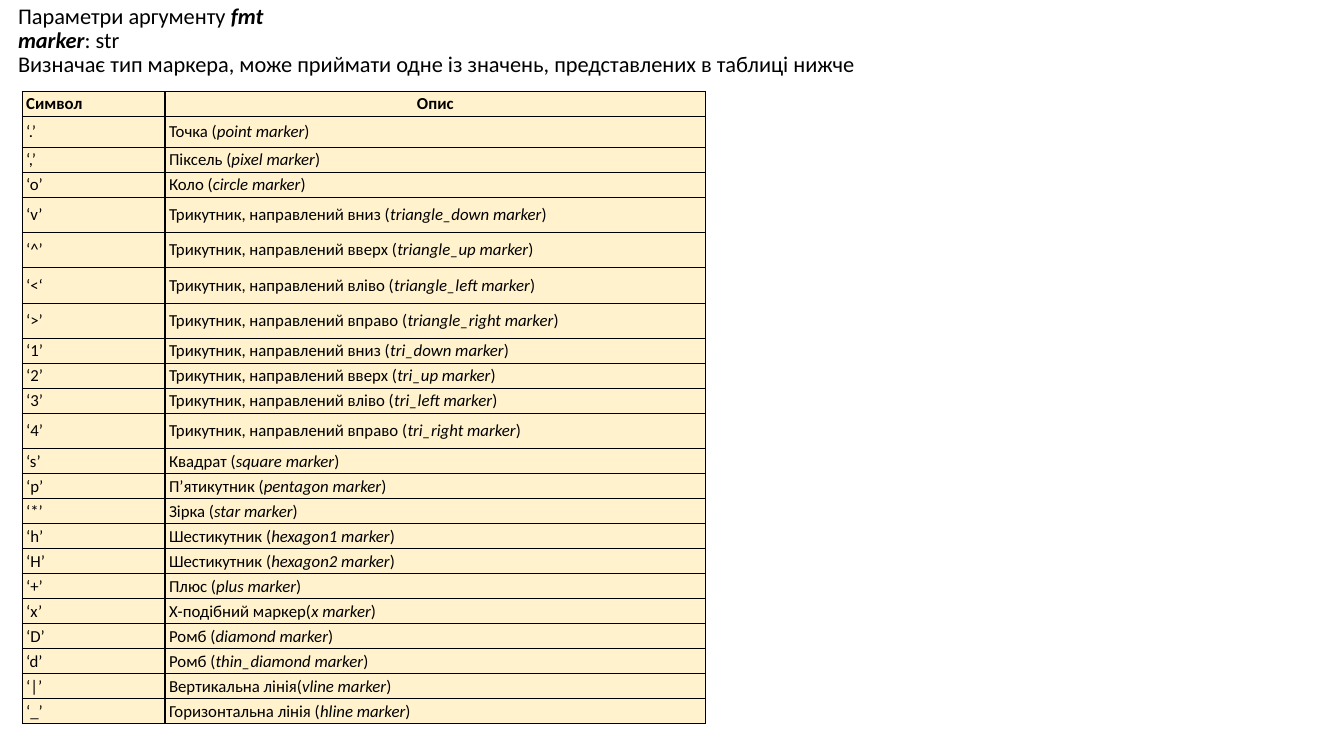
from lxml.etree import SubElement
from pptx import Presentation
from pptx.dml.color import RGBColor
from pptx.enum.text import MSO_ANCHOR, MSO_AUTO_SIZE, PP_ALIGN
from pptx.oxml import parse_xml
from pptx.oxml.ns import nsdecls, qn
from pptx.util import Cm, Pt

MARKERS = [
    ("‘.’", "Точка (", "point"),
    ("‘,’", "Піксель (", "pixel"),
    ("‘o’", "Коло (", "circle"),
    ("‘v’", "Трикутник, направлений вниз (", "triangle_down"),
    ("‘^’", "Трикутник, направлений вверх (", "triangle_up"),
    ("‘<‘", "Трикутник, направлений вліво (", "triangle_left"),
    ("‘>’", "Трикутник, направлений вправо (", "triangle_right"),
    ("‘1’", "Трикутник, направлений вниз (", "tri_down"),
    ("‘2’", "Трикутник, направлений вверх (", "tri_up"),
    ("‘3’", "Трикутник, направлений вліво (", "tri_left"),
    ("‘4’", "Трикутник, направлений вправо (", "tri_right"),
    ("‘s’", "Квадрат (", "square"),
    ("‘p’", "П’ятикутник (", "pentagon"),
    ("‘*’", "Зірка (", "star"),
    ("‘h’", "Шестикутник (", "hexagon1"),
    ("‘H’", "Шестикутник (", "hexagon2"),
    ("‘+’", "Плюс (", "plus"),
    ("‘x’", "Х-подібний маркер(", "x"),
    ("‘D’", "Ромб (", "diamond"),
    ("‘d’", "Ромб (", "thin_diamond"),
    ("‘|’", "Вертикальна лінія(", "vline"),
    ("‘_’", "Горизонтальна лінія (", "hline"),
]
ROW_HEIGHT = 0.63
TALL_ROWS = {"‘.’": 0.77, **dict.fromkeys(["‘v’", "‘^’", "‘<‘", "‘>’", "‘4’"], 0.89)}


def color(value):
    return RGBColor.from_string(value)


def write(para, text, size=12, bold=False, italic=False, ink="000000", font="Calibri"):
    span = para.add_run()
    span.text = text
    span.font.name = font
    span.font.size = Pt(size)
    span.font.bold = bold
    span.font.italic = italic
    span.font.color.rgb = color(ink)


class Page:
    cell_fill = "FFF2CC"
    border = "000000"
    intro_size = 16

    def __init__(self, deck):
        self.slide = deck.slides.add_slide(deck.slide_layouts[1])
        title = self.slide.shapes.title.element
        title.getparent().remove(title)

    def intro(self, lines, left, top, width, height):
        box = self.slide.placeholders[1]
        box.left, box.top, box.width, box.height = map(Cm, (left, top, width, height))
        frame = box.text_frame
        frame.word_wrap = True
        frame.auto_size = MSO_AUTO_SIZE.NONE
        frame.vertical_anchor = MSO_ANCHOR.TOP
        for index, spans in enumerate(lines):
            para = frame.add_paragraph() if index else frame.paragraphs[0]
            properties = para._p.get_or_add_pPr()
            properties.set("marL", "0")
            properties.set("indent", "0")
            SubElement(properties, qn("a:buNone"))
            para.line_spacing = 0.9
            para.space_before = Pt(0)
            for text, strong in spans:
                write(para, text, size=self.intro_size, bold=strong, italic=strong)

    def cell(self, cell, spans, align=PP_ALIGN.LEFT):
        cell.margin_left = cell.margin_right = Cm(0.1)
        cell.margin_top = cell.margin_bottom = Cm(0.05)
        cell.vertical_anchor = MSO_ANCHOR.MIDDLE
        properties = cell._tc.get_or_add_tcPr()
        for side in ("lnL", "lnR", "lnT", "lnB"):
            properties.append(parse_xml(
                f'<a:{side} {nsdecls("a")} w="{Pt(1)}"><a:solidFill>'
                f'<a:srgbClr val="{self.border}"/></a:solidFill></a:{side}>'
            ))
        cell.fill.solid()
        cell.fill.fore_color.rgb = color(self.cell_fill)
        para = cell.text_frame.paragraphs[0]
        para.alignment = align
        for text, style in spans:
            write(para, text, **style)

    def marker_table(self, markers, left, top, widths):
        heights = [ROW_HEIGHT] + [TALL_ROWS.get(symbol, ROW_HEIGHT) for symbol, _, _ in markers]
        table = self.slide.shapes.add_table(
            len(heights), len(widths), Cm(left), Cm(top), Cm(sum(widths)), Cm(sum(heights))
        ).table
        table.first_row = table.horz_banding = False
        for column, width in zip(table.columns, widths):
            column.width = Cm(width)
        for row, height in zip(table.rows, heights):
            row.height = Cm(height)
        self.cell(table.cell(0, 0), [("Символ", {"bold": True})])
        self.cell(table.cell(0, 1), [("Опис", {"bold": True})], PP_ALIGN.CENTER)
        for row, (symbol, description, name) in enumerate(markers, 1):
            self.cell(table.cell(row, 0), [(symbol, {})])
            self.cell(table.cell(row, 1), [
                (description, {}), (f"{name} marker", {"italic": True}), (")", {}),
            ])


def main():
    deck = Presentation()
    deck.slide_width, deck.slide_height = Cm(33.87), Cm(19.05)
    page = Page(deck)
    page.intro([
        [("Параметри аргументу ", False), ("fmt", True)],
        [("marker", True), (": str", False)],
        [("Визначає тип маркера, може приймати одне із значень, представлених в таблиці нижче", False)],
    ], 0.2, 0, 33.12, 18.82)
    page.marker_table(MARKERS, 0.56, 2.31, [3.6, 13.62])
    deck.save("out.pptx")


if __name__ == "__main__":
    main()
